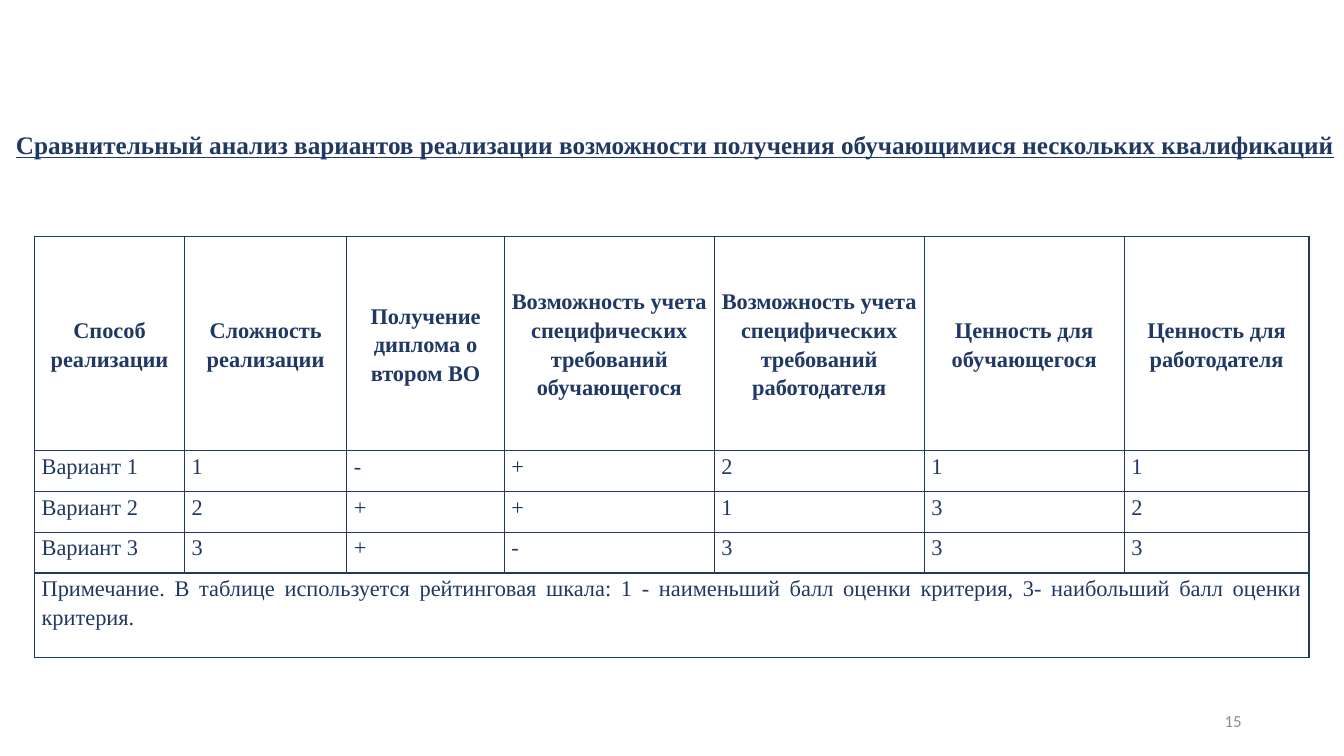
from pptx import Presentation
from pptx.dml.color import RGBColor
from pptx.enum.text import MSO_ANCHOR, PP_ALIGN
from pptx.oxml import parse_xml
from pptx.oxml.ns import nsdecls
from pptx.util import Cm, Pt

LEFT, CENTER, RIGHT, JUSTIFY = PP_ALIGN.LEFT, PP_ALIGN.CENTER, PP_ALIGN.RIGHT, PP_ALIGN.JUSTIFY
TOP, MIDDLE = MSO_ANCHOR.TOP, MSO_ANCHOR.MIDDLE

THEME = {
    "navy": "203864",
    "gray": "8C8C8C",
    "title": {"name": "Times New Roman", "size": Pt(18), "bold": True, "underline": True},
    "header": {"name": "Times New Roman", "size": Pt(16), "bold": True},
    "body": {"name": "Times New Roman", "size": Pt(16), "bold": False},
    "number": {"name": "Calibri", "size": Pt(12)},
}


def write_text(paragraph, text, font_format, color, paragraph_format):
    run = paragraph.add_run()
    run.text = text
    run.font.color.rgb = RGBColor.from_string(color)
    for name, value in font_format.items():
        setattr(run.font, name, value)
    for name, value in paragraph_format.items():
        setattr(paragraph, name, value)


presentation = Presentation()
presentation.slide_width = Cm(33.87)
presentation.slide_height = Cm(19.05)
slide = presentation.slides.add_slide(presentation.slide_layouts[6])

title = "Сравнительный анализ вариантов реализации возможности получения обучающимися нескольких квалификаций"
text_boxes = [
    ((23.92, 17.66, 7.62, 1.01), "15", "number", "gray", 1.0),
    ((0, 1.85, 33.87, 3.68), title, "title", "navy", 0.9),
]
for position, text, style, color, line_spacing in text_boxes:
    shape = slide.shapes.add_textbox(*[Cm(length) for length in position])
    shape.text_frame.word_wrap = True
    shape.text_frame.vertical_anchor = MIDDLE
    write_text(shape.text_frame.paragraphs[0], text, THEME[style], THEME[color],
               {"alignment": RIGHT, "line_spacing": line_spacing})

column_widths = [3.78, 4.09, 3.97, 5.29, 5.29, 5.04, 4.66]
row_heights = [5.39, 1.03, 1.03, 1.03, 2.12]
rows = [
    ["Способ реализации", "Сложность реализации", "Получение диплома о втором ВО",
     "Возможность учета специфических требований обучающегося",
     "Возможность учета специфических требований работодателя",
     "Ценность для обучающегося", "Ценность для работодателя"],
    ["Вариант 1", "1", "-", "+", "2", "1", "1"],
    ["Вариант 2", "2", "+", "+", "1", "3", "2"],
    ["Вариант 3", "3", "+", "-", "3", "3", "3"],
    ["Примечание. В таблице используется рейтинговая шкала: 1 - наименьший балл оценки критерия, "
     "3- наибольший балл оценки критерия."],
]
table = slide.shapes.add_table(
    len(rows), len(column_widths), Cm(0.87), Cm(5.96),
    Cm(sum(column_widths)), Cm(sum(row_heights))).table
table.first_row = False
table.horz_banding = False
for column, width in zip(table.columns, column_widths):
    column.width = Cm(width)
for row, height in zip(table.rows, row_heights):
    row.height = Cm(height)

cell_margins = {"margin_left": Cm(0.18), "margin_right": Cm(0.18), "margin_top": 0, "margin_bottom": 0}
for cell in table.iter_cells():
    cell.fill.background()
    for name, value in cell_margins.items():
        setattr(cell, name, value)
    properties = cell._tc.get_or_add_tcPr()
    for index, side in enumerate(("lnL", "lnR", "lnT", "lnB")):
        properties.insert(index, parse_xml(
            f'<a:{side} {nsdecls("a")} w="{Pt(1)}"><a:solidFill>'
            f'<a:srgbClr val="{THEME["navy"]}"/></a:solidFill></a:{side}>'))

last_row = len(rows) - 1
table.cell(last_row, 0).merge(table.cell(last_row, len(column_widths) - 1))
for row_index, texts in enumerate(rows):
    style, alignment, anchor = ("body", JUSTIFY, TOP) if row_index else ("header", CENTER, MIDDLE)
    for column_index, text in enumerate(texts):
        cell = table.cell(row_index, column_index)
        cell.vertical_anchor = anchor
        write_text(cell.text_frame.paragraphs[0], text, THEME[style], THEME["navy"],
                   {"alignment": alignment, "line_spacing": 1.15, "space_after": Pt(8)})

presentation.save("out.pptx")
